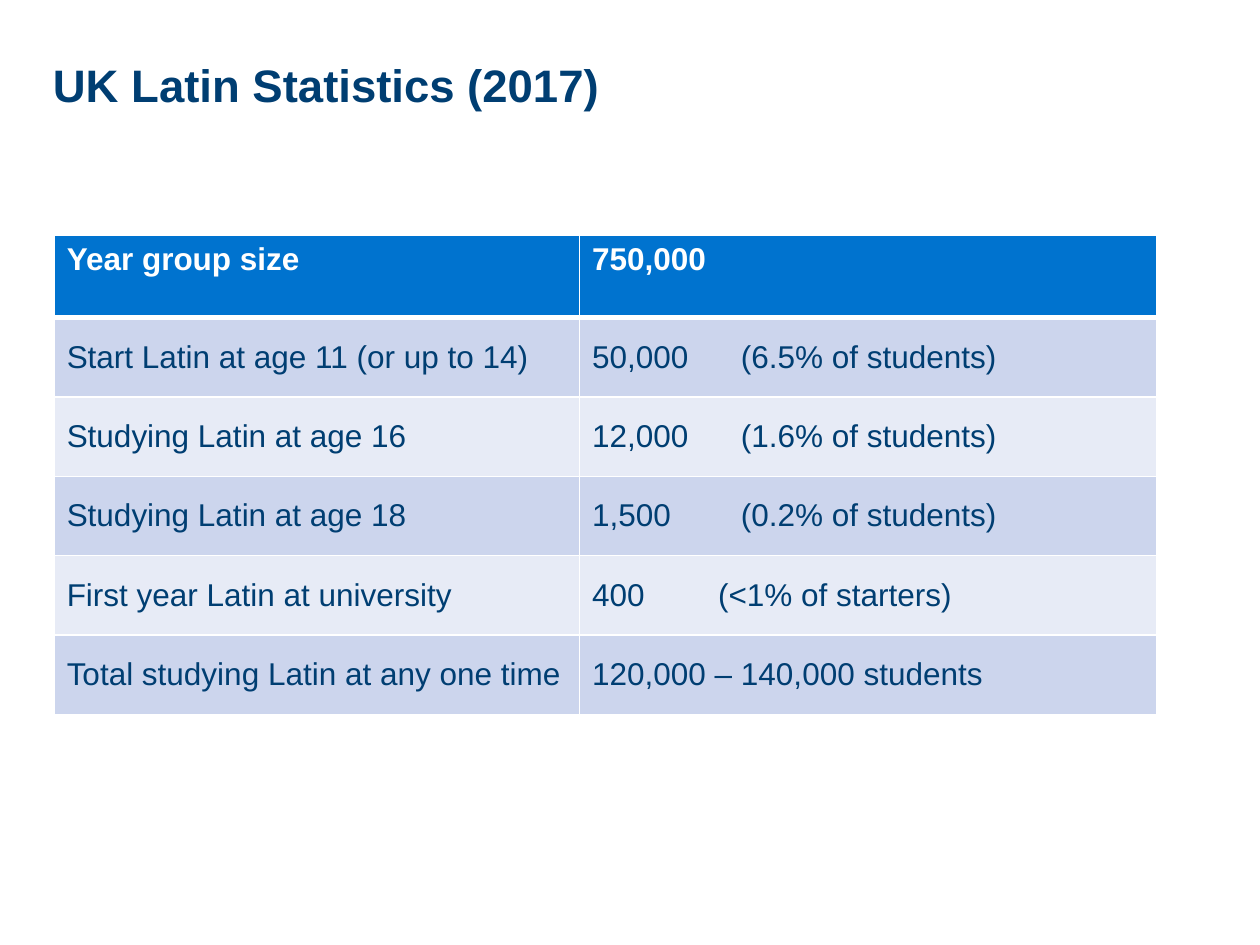
from pptx import Presentation
from pptx.dml.color import RGBColor
from pptx.enum.text import MSO_ANCHOR
from pptx.oxml import parse_xml
from pptx.oxml.ns import nsdecls
from pptx.util import Inches, Pt

TOP, MIDDLE = MSO_ANCHOR.TOP, MSO_ANCHOR.MIDDLE

TITLE = "UK Latin Statistics (2017)"
ROWS = [
    ("Year group size", "750,000"),
    ("Start Latin at age 11 (or up to 14)", "50,000\t(6.5% of students)"),
    ("Studying Latin at age 16", "12,000\t(1.6% of students)"),
    ("Studying Latin at age 18", "1,500\t(0.2% of students)"),
    ("First year Latin at university", "400\t(<1% of starters)"),
    ("Total studying Latin at any one time", "120,000 – 140,000 students"),
]
TABS = {1: 1.18, 2: 1.18, 3: 1.18, 4: 1.0}  # row: tab stop in inches
WIDTHS = (4.17, 4.58)
HEAD_H, ROW_H = 0.65, 0.63

THEME = {
    "font": "Arial", "ink": "003E72", "head": "0073CF", "line": "FFFFFF",
    "bands": ("CCD5ED", "E7EBF6"), "title": 26, "body": 18,
    "thin": 1, "thick": 3,
}


def style(para, size, color, bold):
    font = para.font
    font.name, font.size, font.bold = THEME["font"], Pt(size), bold
    font.color.rgb = RGBColor.from_string(color)


def add_tab(para, stop):
    tabs = parse_xml(
        f'<a:tabLst {nsdecls("a")}><a:tab pos="{Inches(stop)}" algn="l"/></a:tabLst>')
    para._p.get_or_add_pPr().insert(0, tabs)


def add_borders(cell, row):
    """Draw thin lines, with a thick one below the header."""
    sides = dict.fromkeys("LRTB", THEME["thin"])
    if row < 2:
        sides["T" if row else "B"] = THEME["thick"]
    props = cell._tc.get_or_add_tcPr()
    for at, (side, width) in enumerate(sides.items()):
        props.insert(at, parse_xml(
            f'<a:ln{side} {nsdecls("a")} w="{Pt(width)}"><a:solidFill>'
            f'<a:srgbClr val="{THEME["line"]}"/></a:solidFill></a:ln{side}>'))


def fill_cell(cell, text, row, col):
    head = row == 0
    cell.text = text
    cell.vertical_anchor = TOP if head else MIDDLE
    cell.fill.solid()
    color = THEME["head"] if head else THEME["bands"][(row - 1) % 2]
    cell.fill.fore_color.rgb = RGBColor.from_string(color)
    para = cell.text_frame.paragraphs[0]
    style(para, THEME["body"], THEME["line"] if head else THEME["ink"], head)
    if col == 1 and row in TABS:
        add_tab(para, TABS[row])
    add_borders(cell, row)


def add_title(slide):
    box = slide.shapes.add_textbox(
        Inches(0.42), Inches(0.44), Inches(9.16), Inches(0.46))
    frame = box.text_frame
    frame.word_wrap = True
    frame.margin_left = frame.margin_right = 0
    frame.margin_top = frame.margin_bottom = 0
    frame.vertical_anchor = MIDDLE
    frame.text = TITLE
    style(frame.paragraphs[0], THEME["title"], THEME["ink"], True)


def add_stats(slide):
    heights = [HEAD_H] + [ROW_H] * (len(ROWS) - 1)
    table = slide.shapes.add_table(
        len(ROWS), len(WIDTHS), Inches(0.43), Inches(1.87),
        Inches(sum(WIDTHS)), Inches(sum(heights))).table
    for column, width in zip(table.columns, WIDTHS):
        column.width = Inches(width)
    for row, (texts, height) in enumerate(zip(ROWS, heights)):
        table.rows[row].height = Inches(height)
        for col, text in enumerate(texts):
            fill_cell(table.cell(row, col), text, row, col)


def main():
    deck = Presentation()
    deck.slide_width, deck.slide_height = Inches(10), Inches(7.5)
    slide = deck.slides.add_slide(deck.slide_layouts[6])
    add_title(slide)
    add_stats(slide)
    deck.save("out.pptx")


if __name__ == "__main__":
    main()
